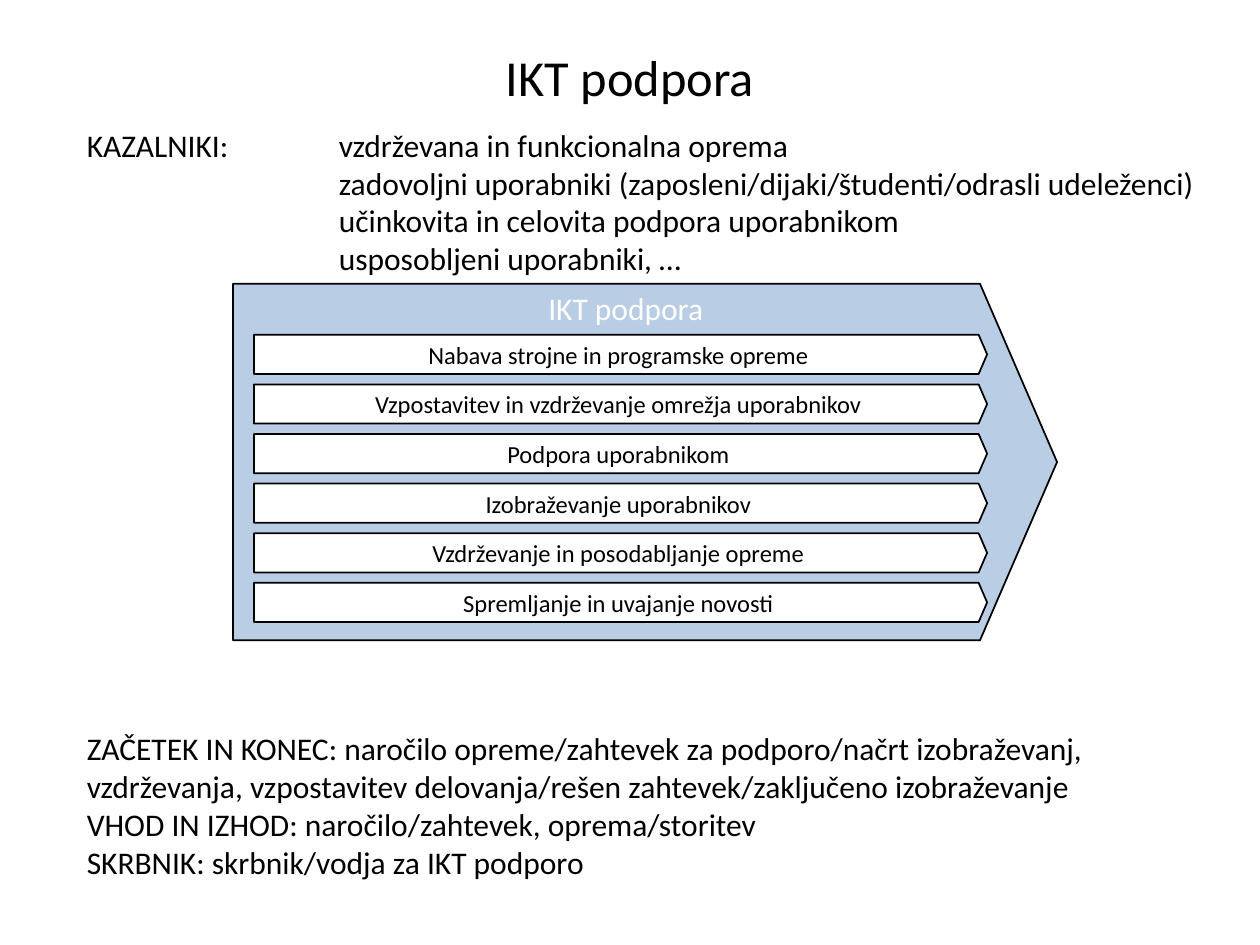
from pptx import Presentation
from pptx.dml.color import RGBColor as Rgb
from pptx.enum.shapes import MSO_SHAPE as Kind
from pptx.enum.text import MSO_ANCHOR as Anchor, MSO_AUTO_SIZE as Auto, PP_ALIGN as Align
from pptx.util import Cm, Pt

TITLE = "IKT podpora"
STEPS = [
    "Nabava strojne in programske opreme",
    "Vzpostavitev in vzdrževanje omrežja uporabnikov",
    "Podpora uporabnikom",
    "Izobraževanje uporabnikov",
    "Vzdrževanje in posodabljanje opreme",
    "Spremljanje in uvajanje novosti",
]
GOALS = [
    "KAZALNIKI: \tvzdrževana in funkcionalna oprema",
    "zadovoljni uporabniki (zaposleni/dijaki/študenti/odrasli udeleženci)",
    "učinkovita in celovita podpora uporabnikom",
    "usposobljeni uporabniki, …",
]
FACTS = [
    "ZAČETEK IN KONEC: naročilo opreme/zahtevek za podporo/načrt izobraževanj, "
    "vzdrževanja, vzpostavitev delovanja/rešen zahtevek/zaključeno izobraževanje",
    "VHOD IN IZHOD: naročilo/zahtevek, oprema/storitev",
    "SKRBNIK: skrbnik/vodja za IKT podporo",
]
THEME = {
    "font": "Calibri",
    "ink": Rgb(0, 0, 0),
    "paper": Rgb(255, 255, 255),
    "blue": Rgb(0xB9, 0xCD, 0xE5),
    "head": Pt(28.8),
    "body": Pt(18),
    "step": Pt(14),
}
INDENT = Cm(5.08)
PITCH = 1


def place(box):
    return [Cm(v) for v in box]


def write(frame, lines, size, ink="ink", align=Align.LEFT, anchor=Anchor.TOP):
    frame.text = "\n".join(lines)
    frame.word_wrap = True
    frame.auto_size = Auto.NONE
    frame.vertical_anchor = anchor
    for para in frame.paragraphs:
        para.alignment = align
        for run in para.runs:
            run.font.name = THEME["font"]
            run.font.size = THEME[size]
            run.font.color.rgb = THEME[ink]


def arrow(slide, box, fill):
    shape = slide.shapes.add_shape(Kind.PENTAGON, *place(box))
    shape.adjustments[0] = 0.216
    shape.shadow.inherit = False
    shape.fill.solid()
    shape.fill.fore_color.rgb = THEME[fill]
    shape.line.color.rgb = THEME["ink"]
    shape.line.width = Pt(1)
    return shape.text_frame


def note(slide, box, lines):
    frame = slide.shapes.add_textbox(*place(box)).text_frame
    write(frame, lines, "body")
    return frame


def main():
    deck = Presentation()
    deck.slide_width, deck.slide_height = Cm(25.4), Cm(19.05)
    slide = deck.slides.add_slide(deck.slide_layouts[5])

    title = slide.shapes.title
    title.left, title.top, title.width, title.height = place((1.27, 0.76, 22.86, 1.55))
    write(title.text_frame, [TITLE], "head", align=Align.CENTER, anchor=Anchor.MIDDLE)

    frame = arrow(slide, (4.7, 5.72, 16.61, 7.19), "blue")
    write(frame, [TITLE], "body", "paper", Align.CENTER)
    frame.margin_top = Cm(0.1)

    for row, step in enumerate(STEPS):
        frame = arrow(slide, (5.12, 6.75 + row * PITCH, 14.78, 0.79), "paper")
        write(frame, [step], "step", align=Align.CENTER, anchor=Anchor.MIDDLE)

    goals = note(slide, (1.5, 2.41, 23.39, 3.33), GOALS)
    for row, para in enumerate(goals.paragraphs):
        props = para._p.get_or_add_pPr()
        props.set("marL", str(INDENT))
        props.set("indent", str(0 if row else -INDENT))

    note(slide, (1.5, 14.58, 21.41, 3.33), FACTS)
    deck.save("out.pptx")


if __name__ == "__main__":
    main()
